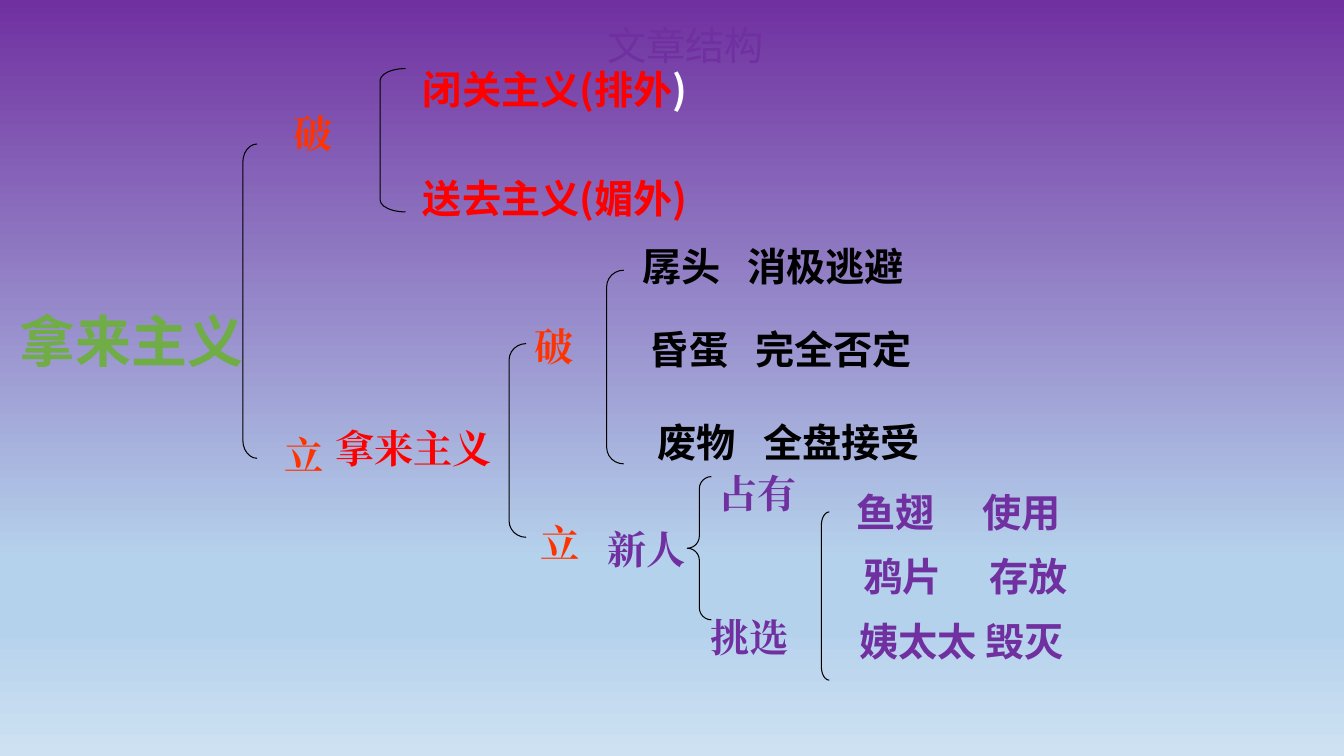
from lxml.etree import SubElement
from pptx import Presentation
from pptx.dml.color import RGBColor
from pptx.enum.shapes import MSO_SHAPE
from pptx.enum.text import MSO_AUTO_SIZE, PP_ALIGN
from pptx.oxml.ns import qn
from pptx.util import Cm, Pt

COLORS = {"purple": "7030A0", "green": "70AD47", "orange": "FF3300", "red": "FF0000",
          "white": "FFFFFF", "black": "000000", "sky": "B5D2EC", "pale": "CEE1F2"}
SANS, SERIF = "Noto Sans CJK SC", "Times New Roman"
GRADIENT = [(0, "purple"), (74, "sky"), (83, "sky"), (100, "pale")]  # percent, colour

# Content: text, left, top, width (cm), font, colour
HEADING = ("文章结构", 12.75, 0.41, 9.04, SANS, "purple")
ROOT = ("拿来主义", 0.25, 7.59, 7.06, SANS, "green")
LABELS = [
    ("破", 7.16, 2.62, 2.34, SERIF, "orange"),
    ("闭关主义(排外", 10.41, 1.52, 8.05, SANS, "red"),
    ("送去主义(媚外)", 10.41, 4.27, 8.46, SANS, "red"),
    ("立", 6.93, 10.74, 2.34, SERIF, "orange"),
    ("拿来主义", 8.2, 10.57, 4.88, SERIF, "red"),
    ("破", 13.21, 8.0, 2.34, SERIF, "orange"),
    ("孱头\t消极逃避", 15.93, 5.97, 8.05, SANS, "black"),
    ("昏蛋\t完全否定", 16.13, 8.08, 8.05, SANS, "black"),
    ("废物\t全盘接受", 16.33, 10.41, 8.05, SANS, "black"),
    ("立", 13.36, 12.95, 2.34, SERIF, "orange"),
    ("新人", 15.06, 13.11, 3.18, SERIF, "purple"),
    ("占有", 17.86, 11.71, 3.05, SERIF, "purple"),
    ("挑选", 17.65, 15.32, 3.45, SERIF, "purple"),
    ("鱼翅\t使用", 21.34, 12.19, 6.25, SANS, "purple"),
    ("鸦片\t存放", 21.51, 13.79, 6.91, SANS, "purple"),
    ("姨太太 毁灭", 21.41, 15.44, 6.98, SANS, "purple"),
]
TAB_STOPS = {"black": 2.65, "purple": 3.17}  # second column, by label colour
CLOSING = {"闭关主义(排外": (")", "white")}  # last character in another colour

# Brackets: shape, left, top, width, height (cm), adjustments
BRACKET, BRACE = MSO_SHAPE.LEFT_BRACKET, MSO_SHAPE.LEFT_BRACE
BRACKETS = [
    (BRACKET, 6.12, 3.63, 0.36, 7.92, [1.28]),
    (BRACKET, 9.58, 1.73, 0.64, 3.61, [0.47]),
    (BRACKET, 12.83, 8.66, 0.43, 4.88, [0.96]),
    (BRACKET, 15.29, 6.81, 0.43, 4.88, [0.96]),
    (BRACKET, 20.7, 12.9, 0.2, 4.24, [1.67]),
    (BRACE, 17.32, 12.01, 0.61, 3.61, [0.5, 0.5]),
]


def color(name):
    return RGBColor.from_string(COLORS[name])


def paint_background(slide):
    fill = slide.background.fill
    fill.gradient()
    fill.gradient_angle = 270
    stops = slide.element.find(".//" + qn("a:gsLst"))
    for stop in list(stops):
        stops.remove(stop)
    for percent, name in GRADIENT:
        stop = SubElement(stops, qn("a:gs"), pos=str(percent * 1000))
        SubElement(stop, qn("a:srgbClr"), val=COLORS[name])


def add_label(slide, label, size=28, height=1.45, bold=True, align=PP_ALIGN.LEFT):
    text, left, top, width, font_name, color_name = label
    box = slide.shapes.add_textbox(Cm(left), Cm(top), Cm(width), Cm(height))
    frame = box.text_frame
    frame.word_wrap = True
    frame.auto_size = MSO_AUTO_SIZE.SHAPE_TO_FIT_TEXT
    paragraph = frame.paragraphs[0]
    paragraph.alignment = align
    paragraph.add_run().text = text
    font = paragraph.font
    font.size, font.bold, font.name = Pt(size), bold, font_name
    font.color.rgb = color(color_name)
    # East Asian typeface and tab stop
    properties = paragraph._p.pPr
    SubElement(properties.find(qn("a:defRPr")), qn("a:ea"), typeface=font_name)
    if "\t" in text:
        tabs = SubElement(properties, qn("a:tabLst"))
        SubElement(tabs, qn("a:tab"), pos=str(Cm(TAB_STOPS[color_name])), algn="l")
        properties.insert(0, tabs)
    if text in CLOSING:
        run = paragraph.add_run()
        run.text, closing_color = CLOSING[text]
        run.font.color.rgb = color(closing_color)


def add_bracket(slide, kind, left, top, width, height, adjustments):
    shape = slide.shapes.add_shape(kind, Cm(left), Cm(top), Cm(width), Cm(height))
    for index, value in enumerate(adjustments):
        shape.adjustments[index] = value
    shape.shadow.inherit = False
    shape.fill.background()
    shape.line.color.rgb = color("black")
    shape.line.width = Pt(0.75)


def main():
    presentation = Presentation()
    presentation.slide_width, presentation.slide_height = Cm(33.87), Cm(19.05)
    slide = presentation.slides.add_slide(presentation.slide_layouts[6])
    paint_background(slide)
    add_label(slide, HEADING, bold=False, align=PP_ALIGN.CENTER)
    add_label(slide, ROOT, size=40, height=2.24)
    for label in LABELS:
        add_label(slide, label)
    for bracket in BRACKETS:
        add_bracket(slide, *bracket)
    presentation.save("out.pptx")


if __name__ == "__main__":
    main()
